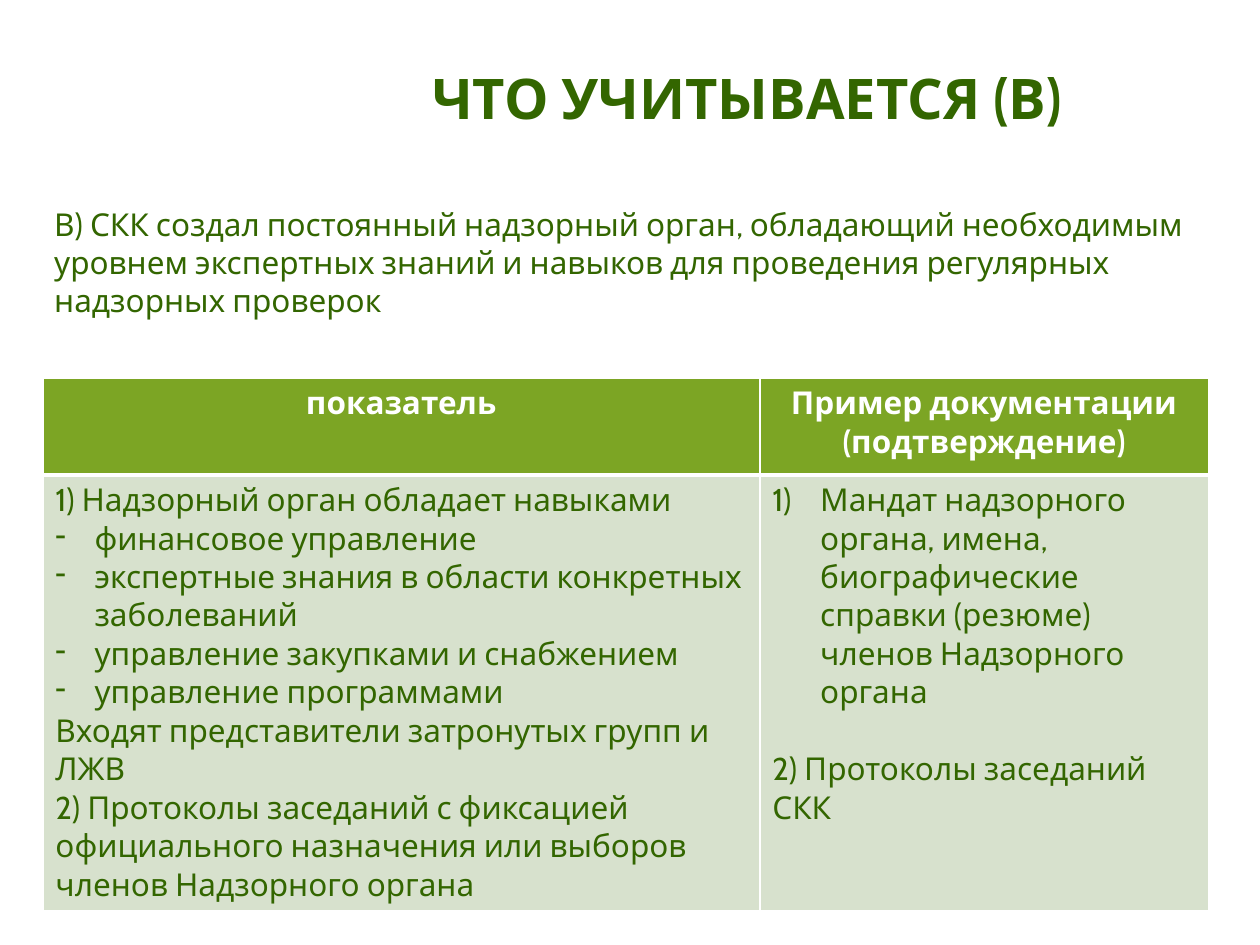
from lxml.etree import SubElement
from pptx import Presentation
from pptx.dml.color import RGBColor
from pptx.enum.text import MSO_ANCHOR, MSO_AUTO_SIZE, PP_ALIGN
from pptx.oxml.ns import qn
from pptx.util import Inches, Pt

WIDTH, HEIGHT = Inches(10), Inches(7.5)
FONT = "Cabin"
DARK_GREEN = RGBColor(0x33, 0x66, 0x00)
HEADER_GREEN = RGBColor(0x7C, 0xA5, 0x24)
PALE_GREEN = RGBColor(0xD7, 0xE1, 0xCD)
WHITE = RGBColor(0xFF, 0xFF, 0xFF)

TITLE = "ЧТО УЧИТЫВАЕТСЯ (В)"
STATEMENT = ("В) СКК создал постоянный надзорный орган, обладающий необходимым "
             "уровнем экспертных знаний и навыков для проведения регулярных "
             "надзорных проверок")
HEADERS = ["показатель", "Пример документации (подтверждение)"]
DASH, NUMBER = "dash", "number"
INDICATORS = [
    ("1) Надзорный орган обладает навыками", None),
    ("финансовое управление", DASH),
    ("экспертные знания в области конкретных заболеваний", DASH),
    ("управление закупками и снабжением", DASH),
    ("управление программами", DASH),
    ("Входят представители затронутых групп и ЛЖВ", None),
    ("2) Протоколы заседаний с фиксацией официального назначения или выборов "
     "членов Надзорного органа", None),
]
DOCUMENTS = [
    ("Мандат надзорного органа, имена, биографические справки (резюме) "
     "членов Надзорного органа", NUMBER),
    ("2) Протоколы заседаний СКК", None),
]


def across(percent):
    return round(WIDTH * percent / 100)


def down(percent):
    return round(HEIGHT * percent / 100)


def place(shape, left, top, width, height):
    shape.left, shape.top = across(left), down(top)
    shape.width, shape.height = across(width), down(height)


def style(para, color, size=18, bold=False, align=PP_ALIGN.LEFT):
    para.alignment = align
    for span in para.runs:
        span.font.name = FONT
        span.font.size = Pt(size)
        span.font.bold = bold
        span.font.color.rgb = color


def add_marker(para, marker):
    properties = para._p.get_or_add_pPr()
    indent = {DASH: Inches(0.31), NUMBER: Inches(0.38)}.get(marker, 0)
    properties.set("marL", str(indent))
    properties.set("indent", str(-indent))
    if marker == DASH:
        SubElement(properties, qn("a:buChar"), char="-")
    elif marker == NUMBER:
        SubElement(properties, qn("a:buAutoNum"), type="arabicParenR")
    else:
        SubElement(properties, qn("a:buNone"))


def fill_placeholder(box, text, anchor):
    frame = box.text_frame
    frame.text = text
    frame.word_wrap = True
    frame.auto_size = MSO_AUTO_SIZE.NONE
    frame.vertical_anchor = anchor
    para = frame.paragraphs[0]
    add_marker(para, None)
    para.space_before = Pt(0)
    return para


def paint_cell(cell, color, bottom):
    properties = cell._tc.get_or_add_tcPr()
    for side, width in (("L", 1), ("R", 1), ("T", 1), ("B", bottom)):
        line = SubElement(properties, qn(f"a:ln{side}"), w=str(Pt(width)))
        solid = SubElement(line, qn("a:solidFill"))
        SubElement(solid, qn("a:srgbClr"), val=str(WHITE))
    cell.fill.solid()
    cell.fill.fore_color.rgb = color


def fill_header(cell, text):
    paint_cell(cell, HEADER_GREEN, 3)
    cell.text_frame.text = text
    style(cell.text_frame.paragraphs[0], WHITE, bold=True, align=PP_ALIGN.CENTER)


def fill_list(cell, items):
    paint_cell(cell, PALE_GREEN, 1)
    frame = cell.text_frame
    frame.text = "\n".join(text for text, _ in items)
    for para, (_, marker) in zip(frame.paragraphs, items):
        add_marker(para, marker)
        style(para, DARK_GREEN)


def add_indicator_table(page):
    table = page.shapes.add_table(
        2, 2, across(3.4), down(40), across(92.5), down(51.2)).table
    for column, share in zip(table.columns, (56.9, 35.6)):
        column.width = across(share)
    for row, share in zip(table.rows, (10.25, 40.95)):
        row.height = down(share)
    for column, (header, items) in enumerate(zip(HEADERS, (INDICATORS, DOCUMENTS))):
        fill_header(table.cell(0, column), header)
        fill_list(table.cell(1, column), items)
    table.cell(1, 1).text_frame.paragraphs[-1].space_before = Pt(22)


def main():
    deck = Presentation()
    deck.slide_width, deck.slide_height = WIDTH, HEIGHT
    page = deck.slides.add_slide(deck.slide_layouts[1])
    title, body = page.placeholders
    place(title, 19.7, 2.27, 79.2, 16)
    style(fill_placeholder(title, TITLE, MSO_ANCHOR.MIDDLE), DARK_GREEN,
          size=32, bold=True, align=PP_ALIGN.CENTER)
    place(body, 3.3, 21.07, 95, 74.4)
    style(fill_placeholder(body, STATEMENT, MSO_ANCHOR.TOP), DARK_GREEN)
    add_indicator_table(page)
    deck.save("out.pptx")


if __name__ == "__main__":
    main()
